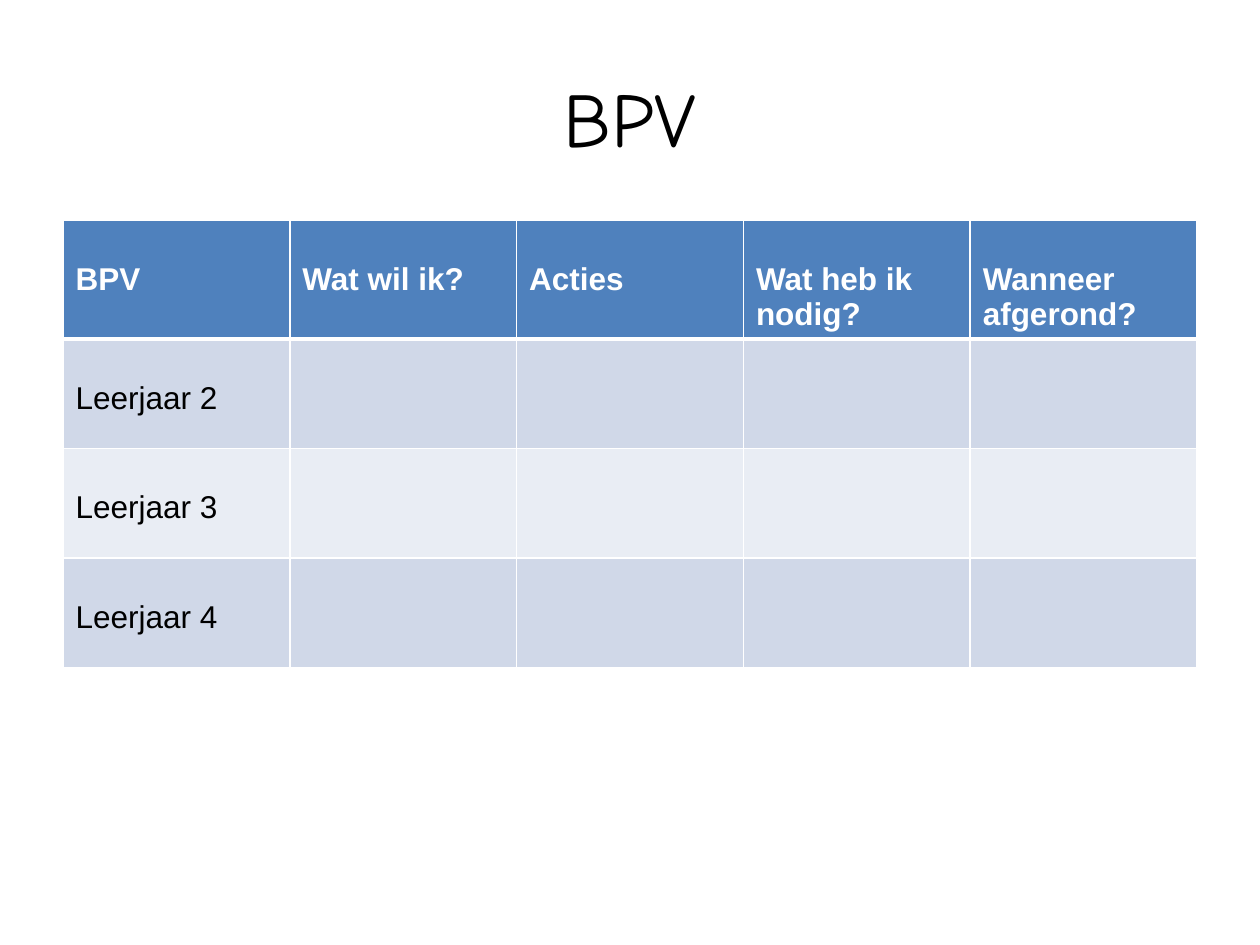
"""Build the BPV planning slide with a title and a table per school year."""
from lxml.etree import SubElement
from pptx import Presentation
from pptx.dml.color import RGBColor
from pptx.enum.text import MSO_ANCHOR, PP_ALIGN
from pptx.oxml.ns import qn
from pptx.util import Inches, Pt

TITLE = "BPV"
HEADERS = ["BPV", "Wat wil ik?", "Acties", "Wat heb ik nodig?", "Wanneer afgerond?"]
YEARS = ["Leerjaar 2", "Leerjaar 3", "Leerjaar 4"]
ROWS = [HEADERS] + [[year] + [""] * (len(HEADERS) - 1) for year in YEARS]

COLORS = {"header": "4F81BD", "odd": "D0D8E8", "even": "E9EDF4",
          "white": "FFFFFF", "black": "000000"}
WIDTH, HEIGHT = 10, 7.5
MARGIN = WIDTH * 0.05
CONTENT_WIDTH = WIDTH - 2 * MARGIN
TITLE_TOP, TITLE_HEIGHT = HEIGHT * 0.04, 1.25
TABLE_TOP = 1.75
ROW_HEIGHT = 0.87
CELL_TOP = 0.33


def color(name):
    return RGBColor.from_string(COLORS[name])


def set_font(paragraph, name, size, color_name, bold=False):
    font = paragraph.font
    font.name, font.size, font.bold = name, Pt(size), bold
    font.color.rgb = color(color_name)


def set_borders(cell, widths):
    properties = cell._tc.get_or_add_tcPr()
    for side, width in widths.items():
        line = SubElement(properties, qn(f"a:ln{side}"), w=str(Pt(width)))
        fill = SubElement(line, qn("a:solidFill"))
        SubElement(fill, qn("a:srgbClr"), val=COLORS["white"])


def add_title(slide):
    title = slide.shapes.title
    title.left, title.top = Inches(MARGIN), Inches(TITLE_TOP)
    title.width, title.height = Inches(CONTENT_WIDTH), Inches(TITLE_HEIGHT)
    title.text_frame.text = TITLE
    title.text_frame.vertical_anchor = MSO_ANCHOR.MIDDLE
    paragraph = title.text_frame.paragraphs[0]
    paragraph.alignment = PP_ALIGN.CENTER
    set_font(paragraph, "Comic Neue", 44, "black")


def add_plan(slide):
    table = slide.shapes.add_table(
        len(ROWS), len(HEADERS), Inches(MARGIN), Inches(TABLE_TOP),
        Inches(CONTENT_WIDTH), Inches(ROW_HEIGHT * len(ROWS))).table
    for row_index, texts in enumerate(ROWS):
        is_header = row_index == 0
        fill = "header" if is_header else "odd" if row_index % 2 else "even"
        borders = {"L": 1, "R": 1, "T": 3 if row_index == 1 else 1,
                   "B": 3 if is_header else 1}
        for column_index, text in enumerate(texts):
            cell = table.cell(row_index, column_index)
            set_borders(cell, borders)
            cell.fill.solid()
            cell.fill.fore_color.rgb = color(fill)
            cell.margin_top = Inches(CELL_TOP)
            cell.text = text
            set_font(cell.text_frame.paragraphs[0], "Arial", 18,
                     "white" if is_header else "black", is_header)


def main():
    presentation = Presentation()
    presentation.slide_width, presentation.slide_height = Inches(WIDTH), Inches(HEIGHT)
    slide = presentation.slides.add_slide(presentation.slide_layouts[5])
    slide.background.fill.solid()
    slide.background.fill.fore_color.rgb = color("white")
    add_title(slide)
    add_plan(slide)
    presentation.save("out.pptx")


if __name__ == "__main__":
    main()
